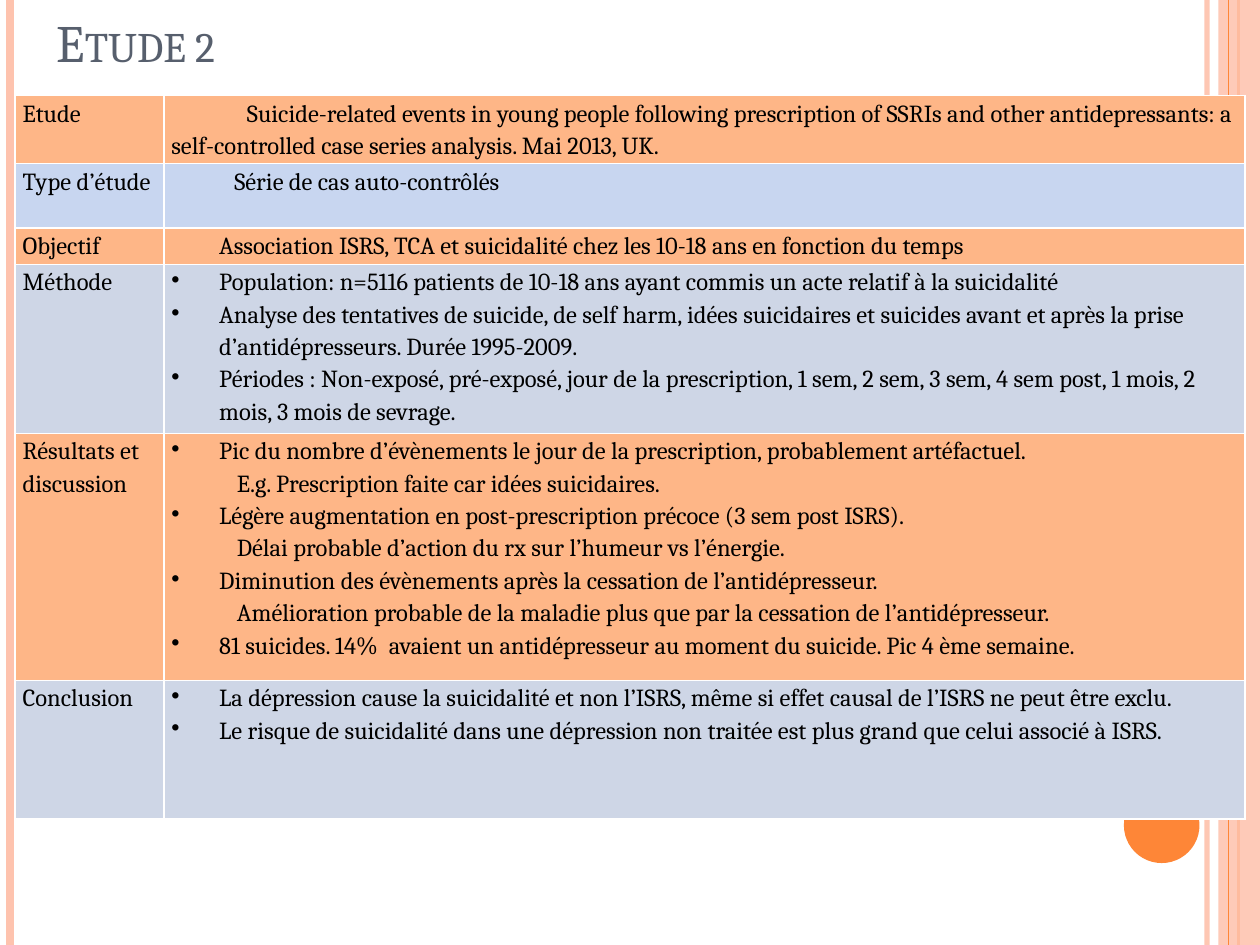
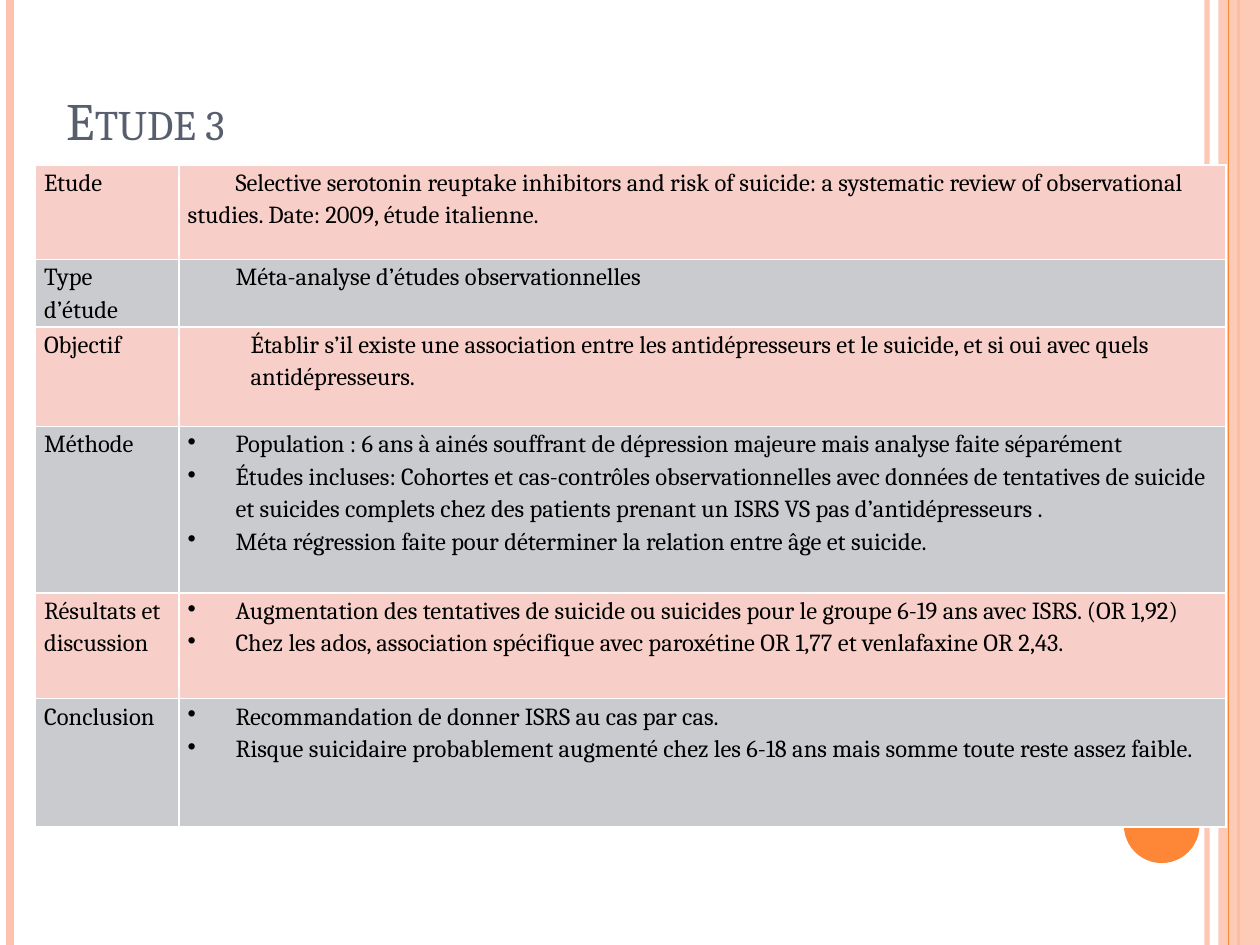
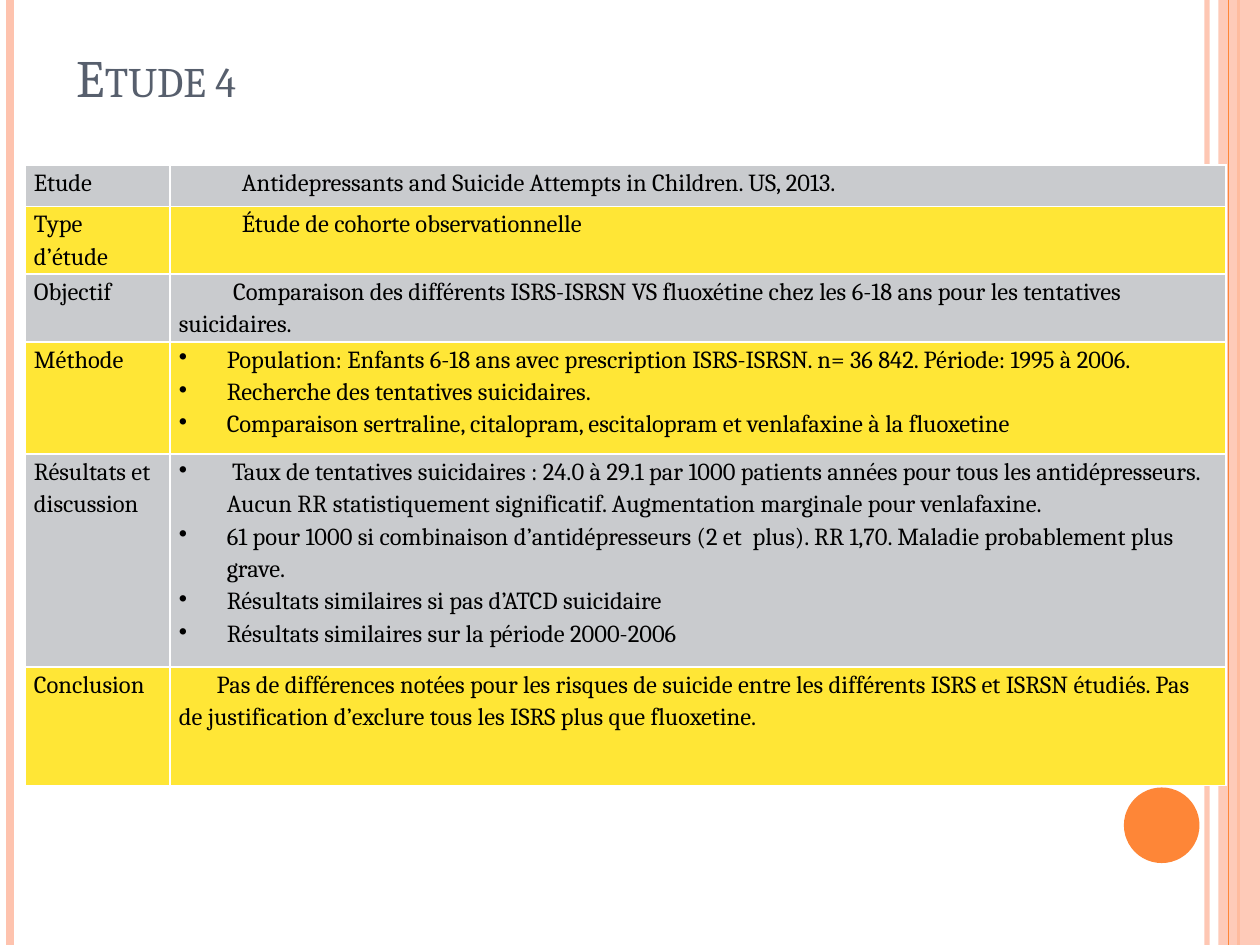
from dataclasses import dataclass

from lxml import etree
from pptx import Presentation
from pptx import util as u
from pptx.dml import color
from pptx.enum import shapes, text
from pptx.oxml import ns


@dataclass(frozen=True)
class Theme:
    font: str = "Cambria"
    title_size: int = 30
    cell_size: int = 14
    title: str = "575F6D"
    ink: str = "000000"
    paper: str = "FFFFFF"
    band: str = "FEC3AE"
    accent: str = "FE8637"
    peach: str = "FEB687"
    sky: str = "C8D6F0"
    mist: str = "CED6E6"
    rose: str = "F8CFC8"
    grey: str = "C9CBCE"
    yellow: str = "FFE636"
    line_spacing: float = 1.15
    border: int = 1


@dataclass(frozen=True)
class Line:
    text: str
    left: float = 0
    first: float = 0
    bullet: bool = False


def point(words):
    return Line(words, 0.38, -0.38, True)


def block(words):
    return Line(words, left=0.5)


def opening(words, first=0.38):
    return Line(words, first=first)


def rgb(value):
    return color.RGBColor.from_string(value)


def add_alpha(fill_parent, percent):
    srgb = fill_parent.find(".//" + ns.qn("a:srgbClr"))
    etree.SubElement(srgb, ns.qn("a:alpha"), val=str(percent * 1000))


class Deck:
    def __init__(self, theme):
        self.theme = theme
        self.prs = Presentation()
        self.prs.slide_width, self.prs.slide_height = u.Inches(10), u.Inches(7.5)
        self.slide = None

    def new_slide(self):
        self.slide = self.prs.slides.add_slide(self.prs.slide_layouts[6])
        self.bands()

    def style(self, paragraph, size, ink):
        font = paragraph.font
        font.name, font.size = self.theme.font, u.Pt(size)
        font.color.rgb = rgb(ink)
        return font

    def rule(self, x, ink, width, opacity=100):
        line = self.slide.shapes.add_connector(
            shapes.MSO_CONNECTOR.STRAIGHT, u.Inches(x), 0, u.Inches(x), self.prs.slide_height)
        line.line.color.rgb = rgb(ink)
        line.line.width = u.Pt(width)
        properties = line._element.spPr
        if opacity < 100:
            add_alpha(properties, opacity)
        etree.SubElement(properties, ns.qn("a:effectLst"))

    def shape(self, kind, box, ink, opacity=100):
        shape = self.slide.shapes.add_shape(kind, *map(u.Inches, box))
        shape.shadow.inherit = False
        shape.fill.solid()
        shape.fill.fore_color.rgb = rgb(ink)
        shape.line.fill.background()
        if opacity < 100:
            add_alpha(shape._element.spPr, opacity)

    def bands(self):
        t = self.theme
        self.rule(9.58, t.band, 3, 93)
        self.rule(0.08, t.band, 4.5)
        self.rule(9.83, t.accent, 1.5)
        self.shape(shapes.MSO_SHAPE.RECTANGLE, (9.67, 0, 0.33, 7.5), t.band, 87)
        self.rule(9.75, t.accent, 0.75)
        self.shape(shapes.MSO_SHAPE.OVAL, (8.92, 6.25, 0.6, 0.6), t.accent)

    def title(self, words, left, top):
        box = self.slide.shapes.add_textbox(*map(u.Inches, (left, top, 9, 1.25)))
        frame = box.text_frame
        frame.word_wrap = True
        frame.vertical_anchor = text.MSO_ANCHOR.BOTTOM
        paragraph = frame.paragraphs[0]
        paragraph.text = words
        font = self.style(paragraph, self.theme.title_size, self.theme.title)
        font._element.set("cap", "small")

    def cell(self, cell, lines, fill, inset):
        t = self.theme
        cell.margin_left = cell.margin_right = u.Inches(inset)
        cell.margin_top = cell.margin_bottom = 0
        properties = cell._tc.get_or_add_tcPr()
        for side in ("lnL", "lnR", "lnT", "lnB"):
            edge = etree.SubElement(properties, ns.qn("a:" + side), w=str(u.Pt(t.border)))
            solid = etree.SubElement(edge, ns.qn("a:solidFill"))
            etree.SubElement(solid, ns.qn("a:srgbClr"), val=t.paper)
        cell.fill.solid()
        cell.fill.fore_color.rgb = rgb(fill)
        frame = cell.text_frame
        for number, line in enumerate(lines):
            paragraph = frame.add_paragraph() if number else frame.paragraphs[0]
            paragraph.text = line.text
            paragraph.line_spacing = t.line_spacing
            layout = paragraph._p.get_or_add_pPr()
            layout.set("marL", str(u.Inches(line.left)))
            layout.set("indent", str(u.Inches(line.first)))
            if line.bullet:
                etree.SubElement(layout, ns.qn("a:buChar"), char="•")
            self.style(paragraph, t.cell_size, t.ink)

    def study_table(self, left, top, widths, heights, fills, inset, contents):
        table = self.slide.shapes.add_table(
            len(heights), len(widths),
            *map(u.Inches, (left, top, sum(widths), sum(heights)))).table
        table.first_row = table.horz_banding = False
        for column, width in zip(table.columns, widths):
            column.width = u.Inches(width)
        for row, height, fill, label, lines in zip(table.rows, heights, fills, LABELS, contents):
            row.height = u.Inches(height)
            self.cell(row.cells[0], [Line(label)], fill, inset)
            self.cell(row.cells[1], lines, fill, inset)


LABELS = ["Etude", "Type d’étude", "Objectif", "Méthode", "Résultats et discussion", "Conclusion"]

STUDY_2 = [
    [opening("Suicide-related events in young people following prescription of SSRIs and other antidepressants: a self-controlled case series analysis. Mai 2013, UK.", 0.6)],
    [block("Série de cas auto-contrôlés")],
    [opening("Association ISRS, TCA et suicidalité chez les 10-18 ans en fonction du temps")],
    [point("Population: n=5116 patients de 10-18 ans ayant commis un acte relatif à la suicidalité"),
     point("Analyse des tentatives de suicide, de self harm, idées suicidaires et suicides avant et après la prise d’antidépresseurs. Durée 1995-2009."),
     point("Périodes : Non-exposé, pré-exposé, jour de la prescription, 1 sem, 2 sem, 3 sem, 4 sem post, 1 mois, 2 mois, 3 mois de sevrage.")],
    [point("Pic du nombre d’évènements le jour de la prescription, probablement artéfactuel."),
     opening("E.g. Prescription faite car idées suicidaires.", 0.52),
     point("Légère augmentation en post-prescription précoce (3 sem post ISRS)."),
     opening("Délai probable d’action du rx sur l’humeur vs l’énergie.", 0.52),
     point("Diminution des évènements après la cessation de l’antidépresseur."),
     opening("Amélioration probable de la maladie plus que par la cessation de l’antidépresseur.", 0.52),
     point("81 suicides. 14%  avaient un antidépresseur au moment du suicide. Pic 4 ème semaine.")],
    [point("La dépression cause la suicidalité et non l’ISRS, même si effet causal de l’ISRS ne peut être exclu."),
     point("Le risque de suicidalité dans une dépression non traitée est plus grand que celui associé à ISRS.")],
]

STUDY_3 = [
    [opening("Selective serotonin reuptake inhibitors and risk of suicide: a systematic review of observational studies. Date: 2009, étude italienne.")],
    [opening("Méta-analyse d’études observationnelles")],
    [block("Établir s’il existe une association entre les antidépresseurs et le suicide, et si oui avec quels antidépresseurs.")],
    [point("Population : 6 ans à ainés souffrant de dépression majeure mais analyse faite séparément"),
     point("Études incluses: Cohortes et cas-contrôles observationnelles avec données de tentatives de suicide et suicides complets chez des patients prenant un ISRS VS pas d’antidépresseurs ."),
     point("Méta régression faite pour déterminer la relation entre âge et suicide.")],
    [point("Augmentation des tentatives de suicide ou suicides pour le groupe 6-19 ans avec ISRS. (OR 1,92)"),
     point("Chez les ados, association spécifique avec paroxétine OR 1,77 et venlafaxine OR 2,43.")],
    [point("Recommandation de donner ISRS au cas par cas."),
     point("Risque suicidaire probablement augmenté chez les 6-18 ans mais somme toute reste assez faible.")],
]

STUDY_4 = [
    [block("Antidepressants and Suicide Attempts in Children. US, 2013.")],
    [block("Étude de cohorte observationnelle")],
    [opening("Comparaison des différents ISRS-ISRSN VS fluoxétine chez les 6-18 ans pour les tentatives suicidaires.", 0.43)],
    [point("Population: Enfants 6-18 ans avec prescription ISRS-ISRSN. n= 36 842. Période: 1995 à 2006."),
     point("Recherche des tentatives suicidaires."),
     point("Comparaison sertraline, citalopram, escitalopram et venlafaxine à la fluoxetine")],
    [point(" Taux de tentatives suicidaires : 24.0 à 29.1 par 1000 patients années pour tous les antidépresseurs. Aucun RR statistiquement significatif. Augmentation marginale pour venlafaxine."),
     point("61 pour 1000 si combinaison d’antidépresseurs (2 et  plus). RR 1,70. Maladie probablement plus grave."),
     point("Résultats similaires si pas d’ATCD suicidaire"),
     point("Résultats similaires sur la période 2000-2006")],
    [opening("Pas de différences notées pour les risques de suicide entre les différents ISRS et ISRSN étudiés. Pas de justification d’exclure tous les ISRS plus que fluoxetine.", 0.3)],
]


def main():
    theme = Theme()
    deck = Deck(theme)

    deck.new_slide()
    deck.title("Etude 2", 0.35, -0.62)
    deck.study_table(
        0.12, 0.76, [1.18, 8.58], [0.54, 0.51, 0.29, 1.29, 1.96, 1.1],
        [theme.peach, theme.sky, theme.peach, theme.mist, theme.peach, theme.mist],
        0.06, STUDY_2)

    deck.new_slide()
    deck.title("Etude 3", 0.43, 0)
    deck.study_table(
        0.28, 1.31, [1.14, 8.31], [0.75, 0.52, 0.79, 1.32, 0.84, 1.02],
        [theme.rose, theme.grey] * 3, 0.07, STUDY_3)

    deck.new_slide()
    deck.title("Etude 4", 0.51, -0.34)
    deck.study_table(
        0.2, 1.31, [1.15, 8.38], [0.33, 0.49, 0.49, 0.89, 1.69, 0.94],
        [theme.grey, theme.yellow] * 3, 0.07, STUDY_4)

    deck.prs.save("out.pptx")


if __name__ == "__main__":
    main()
